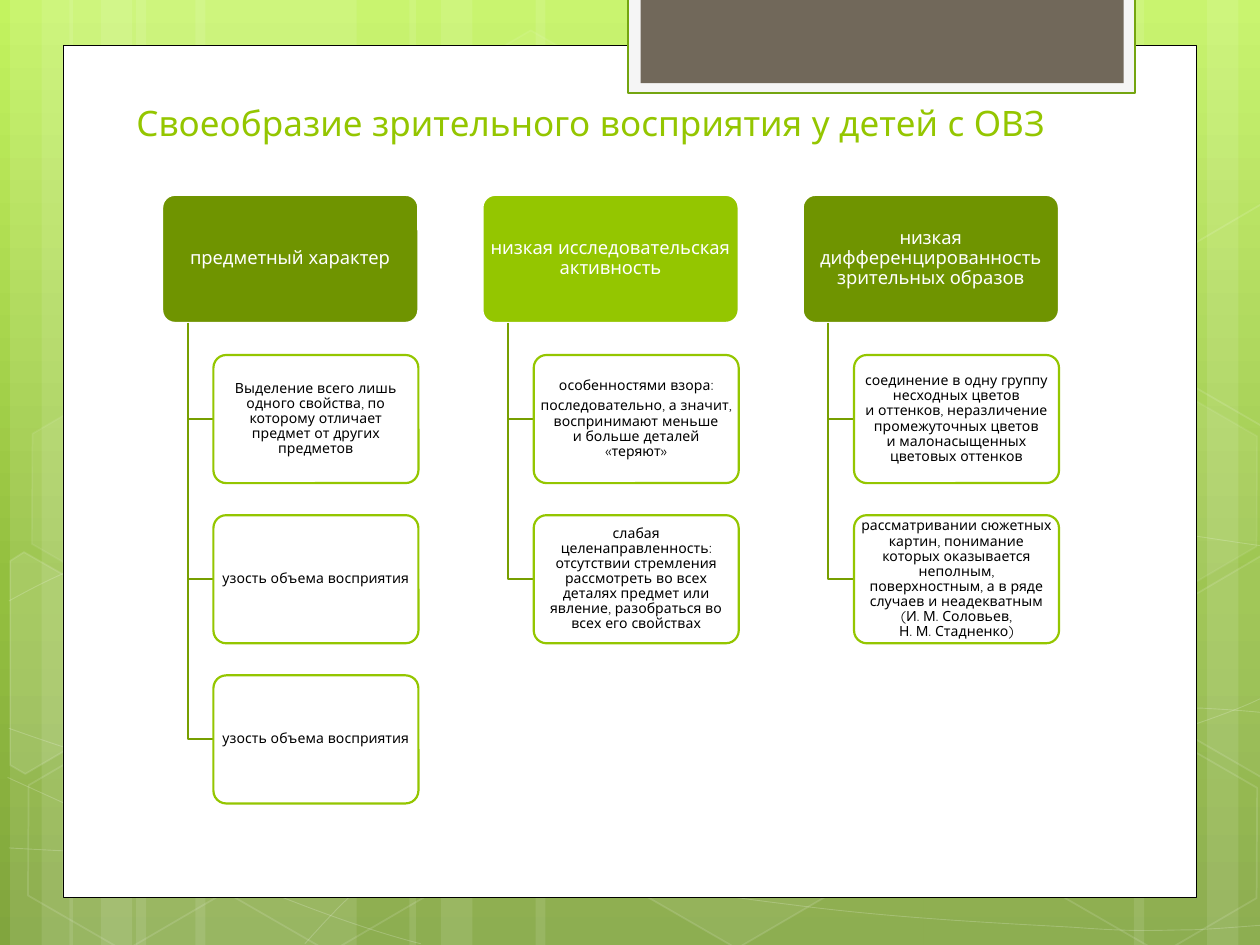
import math
from dataclasses import dataclass

from lxml import etree
from pptx import Presentation
from pptx import util as u
from pptx.dml.color import RGBColor
from pptx.enum import shapes, text
from pptx.oxml.ns import qn


@dataclass(frozen=True)
class Theme:
    font: str = "Quicksand"
    title_pt: float = 20
    head_pt: float = 10.5
    body_pt: float = 8
    white: str = "FFFFFF"
    black: str = "000000"
    lime: str = "94C600"
    olive: str = "6F9400"
    branch: str = "779F00"
    frame: str = "74A510"
    pale: str = "F5F5F5"
    taupe: str = "71685A"
    sky: tuple = ((0, "C3F35F"), (0.62, "93BF3F"), (1, "81A53E"))


T = Theme()
SLIDE_W, SLIDE_H = u.Inches(10), u.Inches(7.5)
COL, ROW = SLIDE_W / 100, SLIDE_H / 75  # grid of 100 columns by 75 rows
TILT = 30  # degrees, for every hexagon
NBSP = chr(160)  # marked ~ in the texts below
RECT, ROUND, HEX = (shapes.MSO_SHAPE.RECTANGLE, shapes.MSO_SHAPE.ROUNDED_RECTANGLE,
                    shapes.MSO_SHAPE.HEXAGON)

# Backdrop bars: left column and width
BARS = [(10.8, 17.5), (0.8, 5), (3.3, 8.3), (15.5, 17.5), (5.5, 5), (8, 8.3),
        (73.3, 17.5), (95.8, 5), (90, 8.3), (42.5, 30.8), (32.5, 5), (35, 8.3)]
# Backdrop curves: start point, then Bezier segments of three points
CURVES = [
    [(0.7, 67.3), (6.1, 67.6), (11.5, 67.9), (19, 67.8), (26.5, 67.7), (35.8, 67.5), (45.8, 66.5),
     (55.8, 65.5), (70, 63.6), (79.2, 61.7), (88.3, 59.8), (97.7, 56.8), (100.7, 55.1)],
    [(0.7, 47.7), (3.6, 46.1), (6.5, 44.6), (12.1, 43.1), (17.8, 41.6), (25.9, 39.4), (34.7, 38.7),
     (43.6, 38), (54.4, 37.9), (65.4, 38.7), (76.4, 39.5), (94.7, 42.6), (100.7, 43.4)],
    [(0.6, 61.7), (12.7, 67.2), (24.7, 72.7), (33.4, 74.9)],
    [(0.7, 57.8), (3.8, 58.9), (7, 60), (12.8, 61.6), (18.6, 63.1), (27.3, 65.6), (35.7, 67.3),
     (44, 69), (54.5, 70.8), (62.8, 71.8), (71.1, 72.9), (80, 73.3), (85.3, 73.6),
     (90.5, 74), (91.9, 73.8), (94.5, 73.8), (97.1, 73.7), (98.9, 73.5), (100.7, 73.4)],
    [(24.2, 74.9), (26, 72.9), (27.8, 70.9), (30.2, 69.1), (32.6, 67.3), (36, 65.3), (38.8, 63.9),
     (41.6, 62.5), (43.3, 61.9), (47, 60.9), (50.6, 59.9), (57.3, 58.5), (60.8, 57.8),
     (64.4, 57.1), (64.9, 57.1), (68, 56.9), (71.1, 56.6), (76, 56.3), (79.4, 56.2),
     (82.9, 56.1), (88.6, 56.2), (88.6, 56.2), (90.8, 56.2), (93.1, 56.2), (95.3, 56.2),
     (97.1, 56.3), (98.8, 56.4), (100.6, 56.6)],
]
# Hexagons: left, top, fill opacity, line opacity
HEXAGONS = [(33.4, 3.6, 4, 8), (49.7, 58.9, 6, 12), (1.1, 59.1, 0, 12), (1.4, 31.2, 7, 8),
            (17.4, 59.2, 0, 12), (75.3, 45.3, 10, 12), (83.4, 59.3, 0, 12), (83.4, 31.4, 7, 8)]
# Hexagons cut by the slide edge: corners, pivot of the tilt, fill opacity
RIGHT_CUT = [(92.6, 48.5), (100.1, 44.1), (100.9, 44.6), (100.9, 61.3), (100.2, 61.7), (92.6, 57.3)]
CUT_HEXAGONS = [
    ([(0.8, 44.5), (1.9, 43.8), (9.6, 48.2), (9.5, 57), (2, 61.4), (0.8, 60.7)], (3.6, 53.5), 10),
    (RIGHT_CUT, (98.5, 52), 4),
    ([(x, y - 27.9) for x, y in RIGHT_CUT], (98.5, 24.1), 0),
]

TREES = [
    ("предметный характер", T.olive, [
        ["Выделение всего лишь одного свойства, по которому отличает предмет от других предметов"],
        ["узость объема восприятия"],
        ["узость объема восприятия"]]),
    ("низкая исследовательская активность", T.lime, [
        ["особенностями взора:",
         "последовательно, а значит, воспринимают меньше и~больше деталей «теряют»"],
        ["слабая целенаправленность: отсутствии стремления рассмотреть во всех деталях предмет "
         "или явление, разобраться во всех его свойствах"]]),
    ("низкая дифференцированность зрительных образов", T.olive, [
        ["соединение в одну группу несходных цветов и~оттенков, неразличение промежуточных "
         "цветов и~малонасыщенных цветовых оттенков"],
        ["рассматривании сюжетных картин, понимание которых оказывается неполным, "
         "поверхностным, а в ряде случаев и~неадекватным (И.~М.~Соловьев, "
         "Н.~М.~Стадненко)"]]),
]


def place(box):
    x, y, w, h = box
    return [u.Emu(round(v)) for v in (x * COL, y * ROW, w * COL, h * ROW)]


def paint(fill, color, opacity):
    fill.solid()
    fill.fore_color.rgb = RGBColor.from_string(color)
    if opacity < 100:
        clr = fill._xPr.find(qn("a:solidFill"))[0]
        etree.SubElement(clr, qn("a:alpha"), val=str(opacity * 1000))


def style(sp, fill=None, line=None, width=1.25, opacity=100, line_opacity=100):
    sp.shadow.inherit = False
    if fill and opacity:
        paint(sp.fill, fill, opacity)
    else:
        sp.fill.background()
    if line:
        paint(sp.line.fill, line, line_opacity)
        sp.line.width = u.Pt(width)
    else:
        sp.line.fill.background()
    return sp


def add_box(slide, kind, box, **look):
    return style(slide.shapes.add_shape(kind, *place(box)), **look)


def add_outline(slide, points, close=False, **look):
    pts = [(round(x * COL), round(y * ROW)) for x, y in points]
    builder = slide.shapes.build_freeform(*pts[0])
    builder.add_line_segments(pts[1:], close=close)
    return style(builder.convert_to_shape(), **look)


def add_curve(slide, points, **look):
    """An outline whose points are taken by threes as cubic segments."""
    sp = add_outline(slide, points, **look)
    lines = list(sp._element.iter(qn("a:lnTo")))
    for i in range(0, len(lines), 3):
        curve = etree.SubElement(lines[i].getparent(), qn("a:cubicBezTo"))
        for ln in lines[i:i + 3]:
            curve.append(ln[0])
            ln.getparent().remove(ln)
    return sp


def turn(points, pivot, degrees):
    c, s = math.cos(math.radians(degrees)), math.sin(math.radians(degrees))
    px, py = pivot
    return [(px + (x - px) * c - (y - py) * s, py + (x - px) * s + (y - py) * c)
            for x, y in points]


def font(p, size, color):
    for r in p.runs:
        r.font.name, r.font.size = T.font, u.Pt(size)
        r.font.color.rgb = RGBColor.from_string(color)


def write(sp, lines, size, color, inset_y):
    tf = sp.text_frame
    tf.word_wrap = True
    tf.vertical_anchor = text.MSO_ANCHOR.MIDDLE
    tf.margin_left = tf.margin_right = u.Inches(0.02)
    tf.margin_top = tf.margin_bottom = u.Inches(inset_y)
    tf.text = "\n".join(lines).replace("~", NBSP)
    for p in tf.paragraphs:
        p.alignment = text.PP_ALIGN.CENTER
        p.line_spacing = 0.9
        p.space_after = u.Pt(0.35 * size)
        font(p, size, color)


def backdrop(slide):
    # Gradient
    fill = slide.background.fill
    fill.gradient()
    fill.gradient_angle = 270
    stops = fill._fill._gradFill.find(qn("a:gsLst"))
    for gs in list(stops):
        stops.remove(gs)
    for pos, color in T.sky:
        gs = etree.SubElement(stops, qn("a:gs"), pos=str(round(pos * 100000)))
        etree.SubElement(gs, qn("a:srgbClr"), val=color)
    # Bars, curves and hexagons
    for x, w in BARS:
        add_box(slide, RECT, (x, 0, w, 75), fill=T.white, opacity=10)
    for points in CURVES:
        add_curve(slide, points, line=T.white, width=0.5, line_opacity=20)
    for x, y, opacity, line_opacity in HEXAGONS:
        sp = add_box(slide, HEX, (x, y, 17.5, 15.2), fill=T.white, opacity=opacity,
                     line=T.white, width=1, line_opacity=line_opacity)
        sp.adjustments[0] = 0.285
        sp.rotation = TILT
    for points, pivot, opacity in CUT_HEXAGONS:
        sp = add_outline(slide, turn(points, pivot, -TILT), close=True, fill=T.white,
                         opacity=opacity, line=T.white, width=1, line_opacity=12)
        sp.rotation = TILT


def card(slide, box):
    x, y, w, h = box
    add_box(slide, RECT, box, fill=T.white, line=T.black, width=0.5)
    # Tab hanging from the top edge
    add_box(slide, RECT, (x + 44.85, -0.2, 40.23, 7.6), fill=T.pale, line=T.frame)
    add_box(slide, RECT, (x + 45.85, -0.2, 38.33, 6.8), fill=T.taupe)


def heading(slide, box, words):
    sp = slide.shapes.title
    slide.shapes._spTree.append(sp._element)  # in front of the card
    sp.left, sp.top, sp.width, sp.height = place(box)
    tf = sp.text_frame
    tf.text = words
    tf.word_wrap = True
    tf.vertical_anchor = text.MSO_ANCHOR.BOTTOM
    tf.paragraphs[0].alignment = text.PP_ALIGN.LEFT
    font(tf.paragraphs[0], T.title_pt, T.lime)


def tree(slide, box, head, color, items):
    """A head with its items hung below; box is that of the head."""
    x, y, w, h = box
    sp = add_box(slide, ROUND, box, fill=color, line=T.white)
    sp.adjustments[0] = 0.1
    write(sp, [head], T.head_pt, T.white, 0.02)
    spine, left = x + 0.1 * w, x + 0.2 * w
    for n, lines in enumerate(items, 1):
        top = y + 1.25 * h * n
        middle = top + h / 2
        add_outline(slide, [(spine, y + h), (spine, middle), (left, middle)], line=T.branch)
        sp = add_box(slide, ROUND, (left, top, 0.8 * w, h), fill=T.white, opacity=90, line=T.lime)
        sp.adjustments[0] = 0.1
        write(sp, lines, T.body_pt, T.black, 0.01)


def main():
    prs = Presentation()
    prs.slide_width, prs.slide_height = SLIDE_W, SLIDE_H
    slide = prs.slides.add_slide(prs.slide_layouts[5])
    backdrop(slide)
    card(slide, (5, 3.6, 90, 67.65))
    heading(slide, (9.82, 4.4, 76.8, 7.5), "Своеобразие зрительного восприятия у детей с ОВЗ")
    for n, (head, color, items) in enumerate(TREES):
        tree(slide, (12.87 + 25.42 * n, 15.46, 20.34, 10.17), head, color, items)
    prs.save("out.pptx")


if __name__ == "__main__":
    main()
